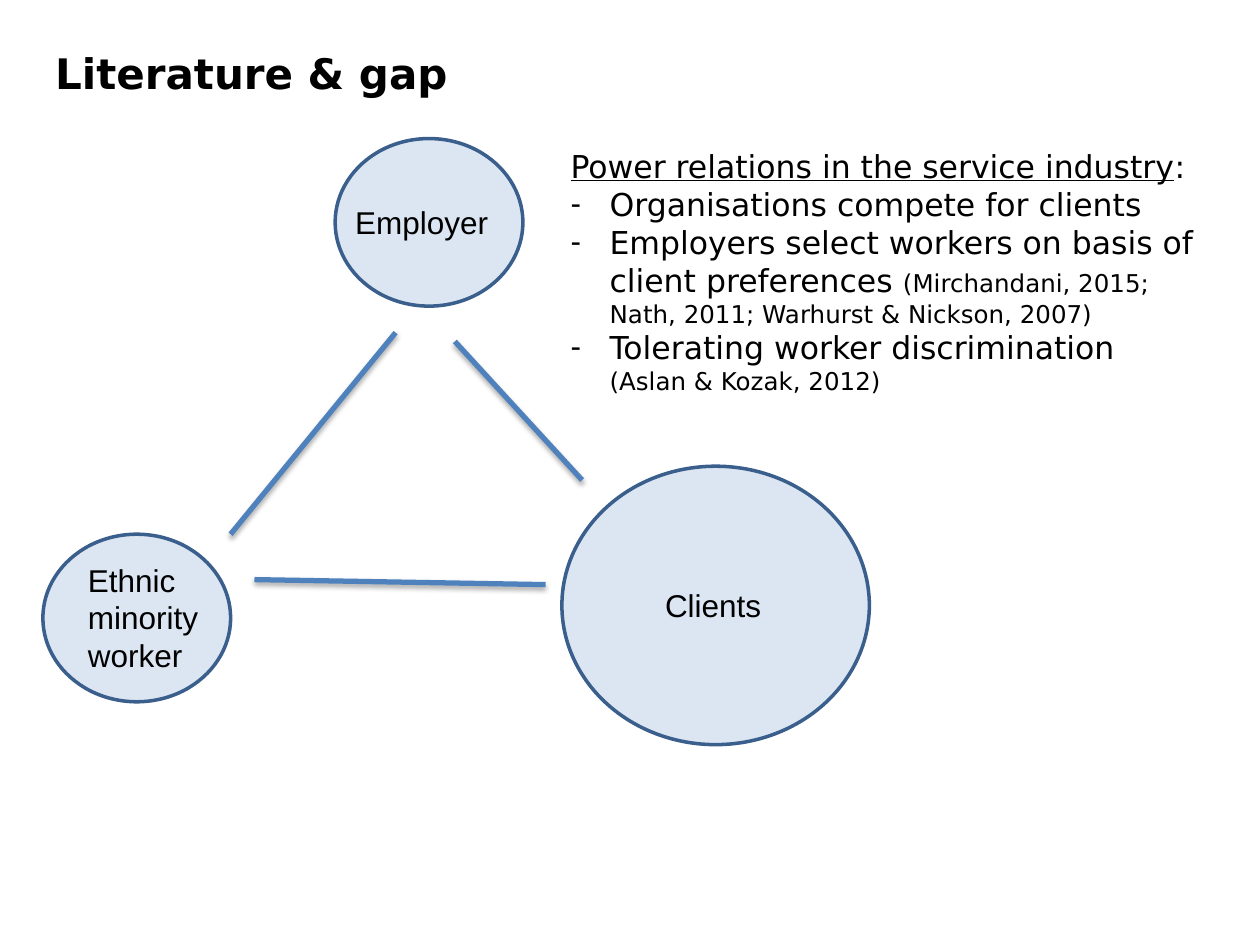
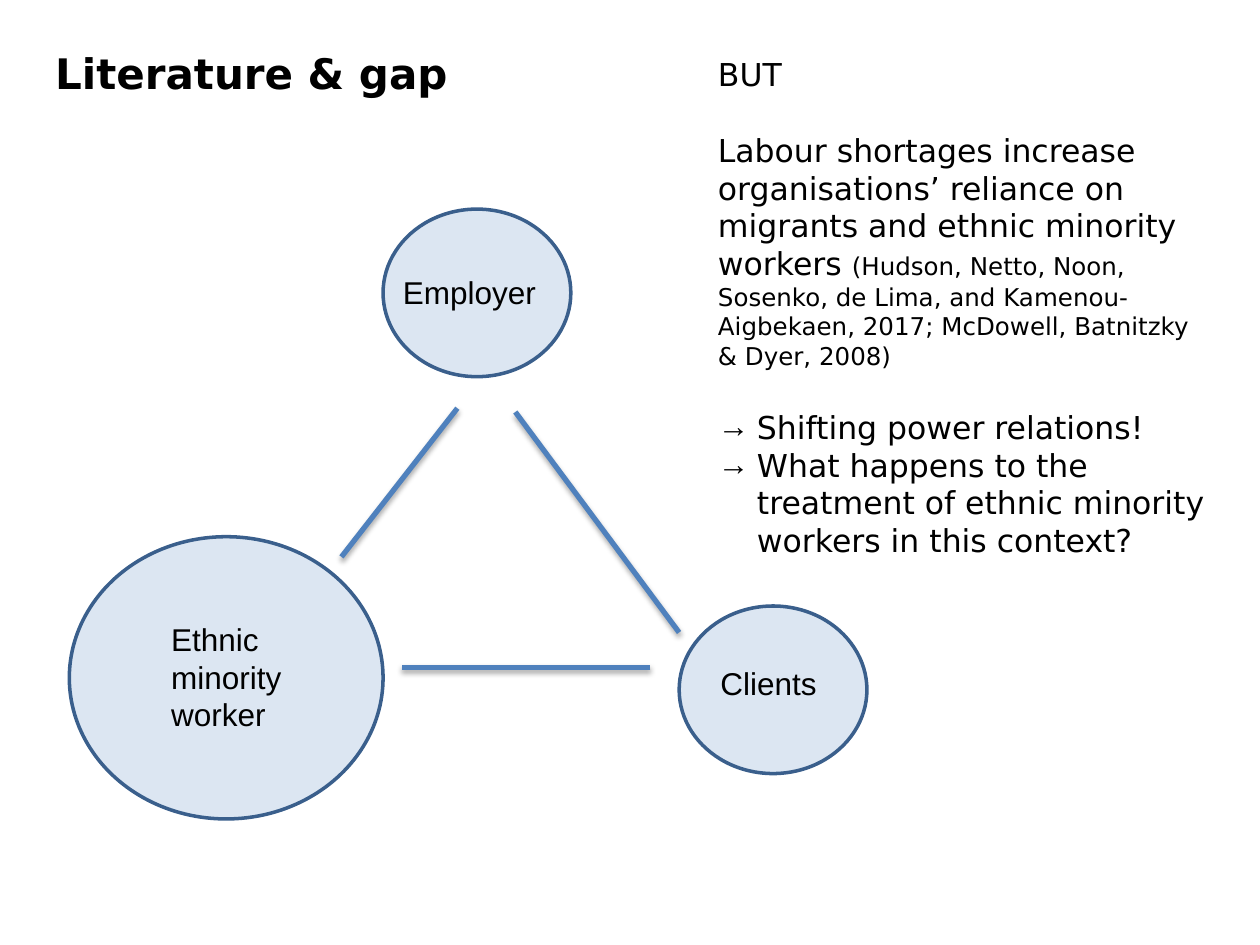
from dataclasses import dataclass
from lxml.etree import SubElement
from pptx import Presentation
from pptx.dml.color import RGBColor
from pptx.enum.shapes import MSO_CONNECTOR, MSO_SHAPE
from pptx.enum.text import MSO_AUTO_SIZE
from pptx.oxml import parse_xml
from pptx.oxml.ns import nsdecls, qn
from pptx.util import Inches, Pt


@dataclass(frozen=True)
class Theme:
    text: RGBColor = RGBColor.from_string("000000")
    fill: RGBColor = RGBColor.from_string("DCE6F2")
    outline: RGBColor = RGBColor.from_string("3A5F8C")
    link: RGBColor = RGBColor.from_string("4F81BD")
    body_font: str = "DejaVu Sans"
    label_font: str = "Arial"
    title: int = 24
    body: int = 18
    cite: int = 14
    gap: float = 21.5


T = Theme()
INDENT = Inches(0.31)
SHADOW = (
    f'<a:effectLst {nsdecls("a")}>'
    '<a:outerShdw blurRad="39370" dist="22860" dir="5400000" rotWithShape="0">'
    '<a:srgbClr val="000000"><a:alpha val="35000"/></a:srgbClr>'
    "</a:outerShdw></a:effectLst>"
)


def add_text(s, box, paras, font=T.body_font, bold=False):
    tb = s.shapes.add_textbox(*map(Inches, box))
    tf = tb.text_frame
    tf.word_wrap = True
    tf.auto_size = MSO_AUTO_SIZE.SHAPE_TO_FIT_TEXT
    for i, (bullet, before, runs) in enumerate(paras):
        p = tf.paragraphs[0] if i == 0 else tf.add_paragraph()
        if before:
            p.space_before = Pt(before)
        if bullet:
            pPr = p._p.get_or_add_pPr()
            pPr.set("marL", str(INDENT))
            pPr.set("indent", str(-INDENT))
            SubElement(pPr, qn("a:buFont")).set("typeface", T.label_font)
            SubElement(pPr, qn("a:buChar")).set("char", bullet)
        for text, size, underline in runs:
            r = p.add_run()
            r.text = text
            r.font.name = font
            r.font.size = Pt(size)
            r.font.color.rgb = T.text
            r.font.bold = bold
            r.font.underline = underline


SLIDES = [
    {
        "notes_box": (4.43, 1.12, 5.19, 2.09),
        "paras": [
            ("", 0, [("Power relations in the service industry", T.body, True), (":", T.body, False)]),
            ("-", 0, [("Organisations compete for clients", T.body, False)]),
            ("-", 0, [
                ("Employers select workers on basis of client preferences ", T.body, False),
                ("(Mirchandani, 2015; Nath, 2011; Warhurst & Nickson, 2007)", T.cite, False),
            ]),
            ("-", 0, [
                ("Tolerating worker discrimination ", T.body, False),
                ("(Aslan & Kozak, 2012)", T.cite, False),
            ]),
        ],
        "actors": [
            ("Employer", (2.66, 1.1, 1.49, 1.33), (2.72, 1.56)),
            ("Ethnic minority worker", (0.34, 4.24, 1.49, 1.33), (0.6, 4.4)),
            ("Clients", (4.46, 3.7, 2.44, 2.21), (5.18, 4.6)),
        ],
        "links": [(3.14, 2.64, 1.83, 4.24), (3.61, 2.71, 4.62, 3.81), (4.33, 4.64, 2.02, 4.6)],
    },
    {
        "notes_box": (5.6, 0.39, 4.07, 4.44),
        "paras": [
            ("", 0, [("BUT", T.body, False)]),
            ("", T.gap, [
                ("Labour shortages increase organisations’ reliance on migrants and "
                 "ethnic minority workers ", T.body, False),
                ("(Hudson, Netto, Noon, Sosenko, de Lima, and Kamenou-Aigbekaen, 2017; "
                 "McDowell, Batnitzky & Dyer, 2008)", T.cite, False),
            ]),
            ("→", T.gap, [("Shifting power relations!", T.body, False)]),
            ("→", 0, [
                ("What happens to the treatment of ethnic minority workers in this context?", T.body, False),
            ]),
        ],
        "actors": [
            ("Employer", (3.04, 1.66, 1.49, 1.33), (3.1, 2.12)),
            ("Ethnic minority worker", (0.55, 4.26, 2.49, 2.24), (1.26, 4.87)),
            ("Clients", (5.39, 4.81, 1.49, 1.33), (5.62, 5.22)),
        ],
        "links": [(3.63, 3.24, 2.71, 4.42), (4.09, 3.27, 5.39, 5.02), (5.16, 5.3, 3.19, 5.3)],
    },
]

prs = Presentation()
prs.slide_width = Inches(10)
prs.slide_height = Inches(7.5)

for content in SLIDES:
    s = prs.slides.add_slide(prs.slide_layouts[6])
    add_text(s, (0.34, 0.33, 9.07, 0.5), [("", 0, [("Literature & gap", T.title, False)])], bold=True)
    add_text(s, content["notes_box"], content["paras"])

    for name, circle, label in content["actors"]:
        sp = s.shapes.add_shape(MSO_SHAPE.OVAL, *map(Inches, circle))
        sp.shadow.inherit = False
        sp.fill.solid()
        sp.fill.fore_color.rgb = T.fill
        sp.line.color.rgb = T.outline
        sp.line.width = Pt(2)

    for ends in content["links"]:
        cn = s.shapes.add_connector(MSO_CONNECTOR.STRAIGHT, *map(Inches, ends))
        cn.line.color.rgb = T.link
        cn.line.width = Pt(3)
        cn._element.spPr.append(parse_xml(SHADOW))

    for name, circle, label in content["actors"]:
        height = 1.01 if " " in name else 0.4
        add_text(s, (*label, 1.37, height), [("", 0, [(name, T.body, False)])], font=T.label_font)

prs.save("out.pptx")
